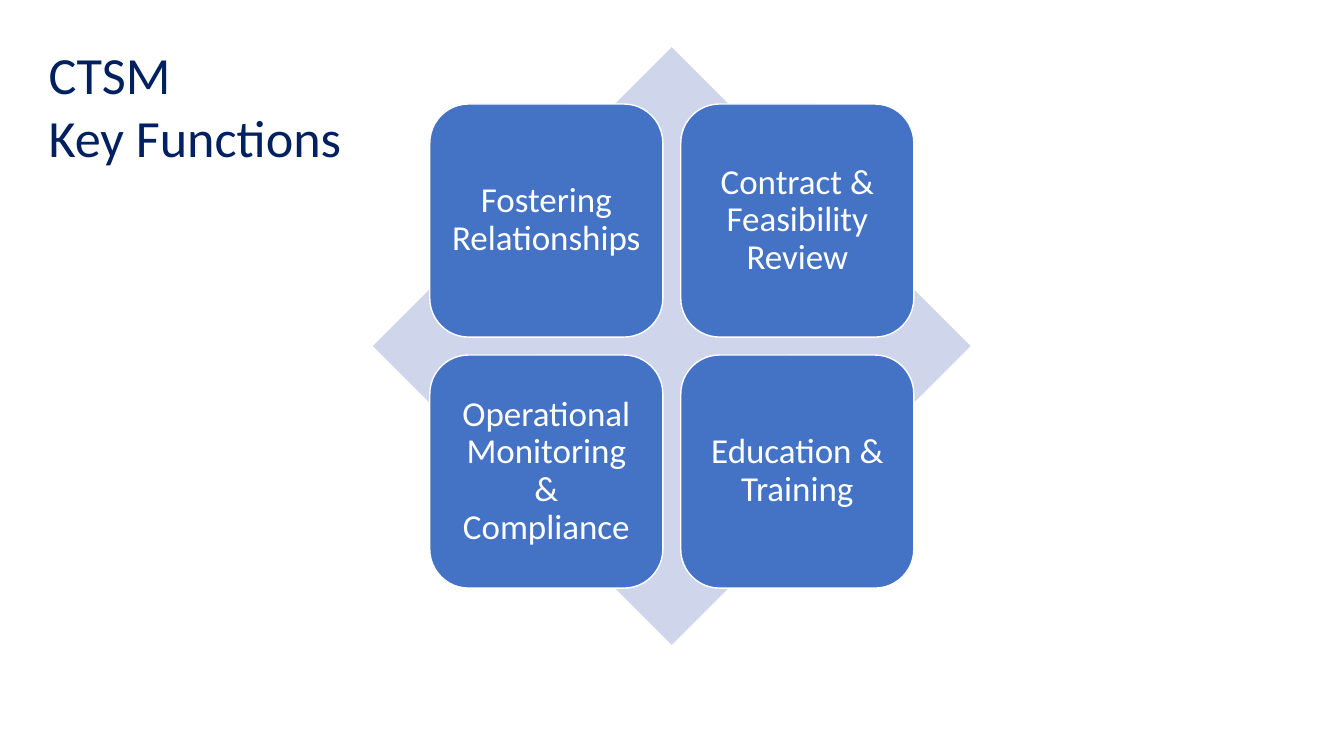
from pptx import Presentation
from pptx.dml.color import RGBColor
from pptx.enum.shapes import MSO_SHAPE as Shape
from pptx.enum.text import MSO_ANCHOR as Anchor, MSO_AUTO_SIZE as AutoSize, PP_ALIGN as Align
from pptx.util import Cm, Pt

NAVY, BLUE, PALE, WHITE = "002060", "4472C4", "CFD5EA", "FFFFFF"
FUNCTIONS = [
    "Fostering Relationships",
    "Contract & Feasibility Review",
    "Operational Monitoring & Compliance",
    "Education & Training",
]


def colour(hex_value):
    return RGBColor.from_string(hex_value)


def apply(target, formats):
    for attribute, value in formats.items():
        setattr(target, attribute, value)


def set_text(frame, text, size, hex_value, frame_format, paragraph_format):
    frame.text = text
    apply(frame, frame_format)
    for paragraph in frame.paragraphs:
        apply(paragraph, paragraph_format)
        for run in paragraph.runs:
            apply(run.font, {"name": "Calibri", "size": Pt(size)})
            run.font.color.rgb = colour(hex_value)


def add_block(slide, kind, left, top, side, fill):
    block = slide.shapes.add_shape(kind, Cm(left), Cm(top), Cm(side), Cm(side))
    block.shadow.inherit = False
    block.fill.solid()
    block.fill.fore_color.rgb = colour(fill)
    block.line.fill.background()
    return block


def add_title(slide, left, top, width, height):
    title = slide.shapes.title
    apply(title, {"left": Cm(left), "top": Cm(top), "width": Cm(width), "height": Cm(height)})
    set_text(title.text_frame, "CTSM\nKey Functions", 37.3, NAVY,
             {"word_wrap": False, "auto_size": AutoSize.NONE, "vertical_anchor": Anchor.TOP},
             {"alignment": Align.LEFT, "line_spacing": 1.0})


def add_matrix(slide, left, top, side):
    # Diamond behind the tiles
    add_block(slide, Shape.DIAMOND, left, top, side, PALE)

    # Two by two tiles, centred on the diamond
    tile_side, gap = 0.39 * side, 0.03 * side
    margin = (side - 2 * tile_side - gap) / 2
    inset = Cm(0.25)
    for index, function in enumerate(FUNCTIONS):
        row, column = divmod(index, 2)
        tile = add_block(slide, Shape.ROUNDED_RECTANGLE,
                         left + margin + column * (tile_side + gap),
                         top + margin + row * (tile_side + gap), tile_side, BLUE)
        tile.line.color.rgb = colour(WHITE)
        tile.line.width = Pt(1)
        set_text(tile.text_frame, function, 25, WHITE,
                 {"word_wrap": True, "vertical_anchor": Anchor.MIDDLE,
                  "margin_left": inset, "margin_right": inset,
                  "margin_top": inset, "margin_bottom": inset},
                 {"alignment": Align.CENTER, "line_spacing": 0.9})


def main():
    deck = Presentation()
    apply(deck, {"slide_width": Cm(33.87), "slide_height": Cm(19.05)})
    slide = deck.slides.add_slide(deck.slide_layouts.get_by_name("Title Only"))
    add_matrix(slide, left=9.4, top=1.19, side=15.06)
    add_title(slide, left=0.97, top=0.94, width=7.98, height=3.45)
    deck.save("out.pptx")


if __name__ == "__main__":
    main()
